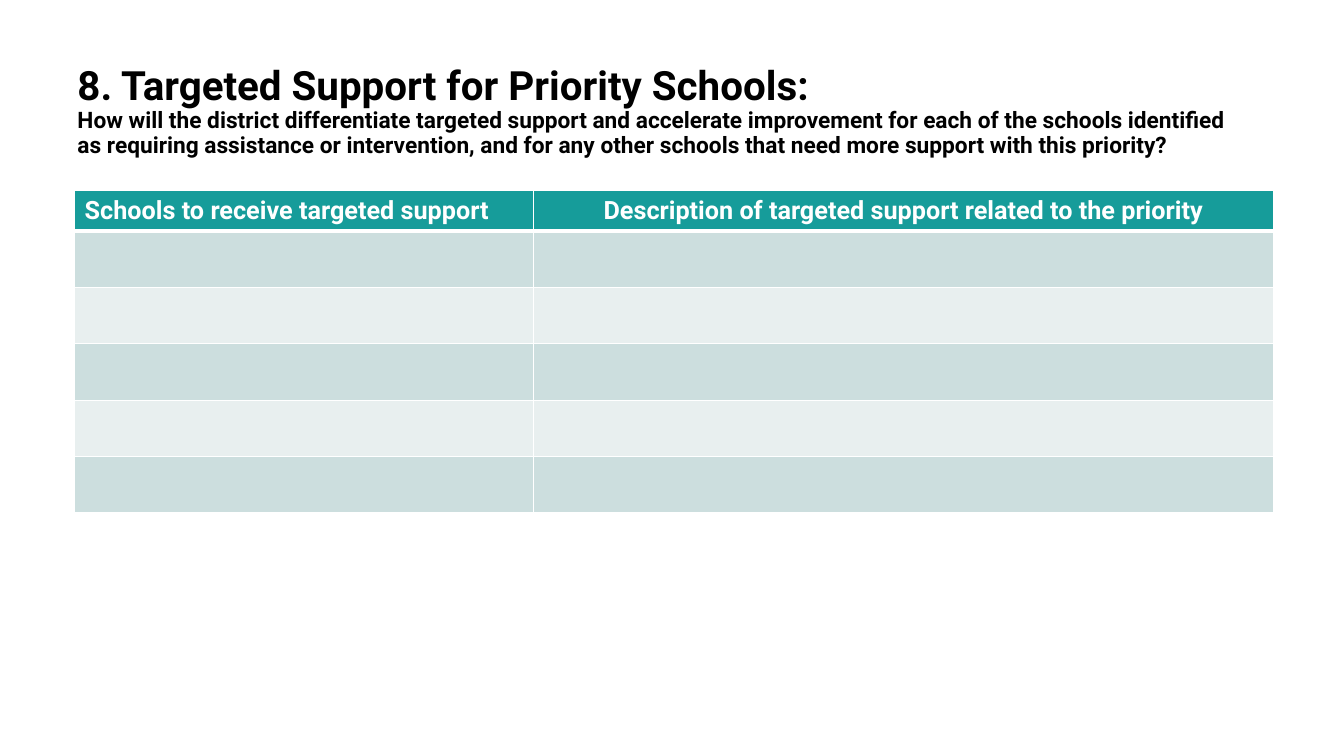
from lxml import etree
from pptx import Presentation
from pptx.dml.color import RGBColor
from pptx.enum.text import MSO_ANCHOR as Anchor, PP_ALIGN as Align
from pptx.oxml.ns import qn
from pptx.util import Inches, Pt

FONT = "Roboto"
BLACK = RGBColor(0x00, 0x00, 0x00)
WHITE = RGBColor(0xFF, 0xFF, 0xFF)
TEAL = RGBColor(0x16, 0x9C, 0x9A)
BANDS = [RGBColor(0xCC, 0xDE, 0xDE), RGBColor(0xE8, 0xEF, 0xEF)]

HEADING = "8. Targeted Support for Priority Schools:"
QUESTION = (
    "How will the district differentiate targeted support and accelerate "
    "improvement for each of the schools identified as requiring assistance or "
    "intervention, and for any other schools that need more support with this priority?"
)
COLUMNS = [
    ("Schools to receive targeted support", 4.55, Align.LEFT),
    ("Description of targeted support related to the priority", 7.34, Align.CENTER),
]
SCHOOL_ROWS = 5
HEADER_HEIGHT = 0.38
ROW_HEIGHT = 0.56


def style(span, size, color):
    span.font.name = FONT
    span.font.size = Pt(size)
    span.font.bold = True
    span.font.color.rgb = color


def add_title(page, left, top, width, height):
    box = page.shapes.add_textbox(*map(Inches, (left, top, width, height)))
    frame = box.text_frame
    frame.word_wrap = True
    frame.vertical_anchor = Anchor.TOP
    para = frame.paragraphs[0]
    para.text = f"{HEADING}\v{QUESTION}"
    para.line_spacing = 0.9
    for span, size in zip(para.runs, (28.8, 16.2)):
        style(span, size, BLACK)


def set_borders(cell, bottom):
    """Draw white cell edges, ahead of the fill as the schema requires."""
    props = cell._tc.get_or_add_tcPr()
    edges = {"a:lnL": 1, "a:lnR": 1, "a:lnT": 1, "a:lnB": bottom}
    for place, (tag, width) in enumerate(edges.items()):
        line = etree.Element(qn(tag), w=str(Pt(width)))
        fill = etree.SubElement(line, qn("a:solidFill"))
        etree.SubElement(fill, qn("a:srgbClr"), val=str(WHITE))
        props.insert(place, line)


def add_support_table(page, left, top):
    heights = [HEADER_HEIGHT] + [ROW_HEIGHT] * SCHOOL_ROWS
    width = sum(column[1] for column in COLUMNS)
    table = page.shapes.add_table(
        len(heights), len(COLUMNS),
        *map(Inches, (left, top, width, sum(heights))),
    ).table
    for row, height in zip(table.rows, heights):
        row.height = Inches(height)
    for index, (label, column_width, align) in enumerate(COLUMNS):
        table.columns[index].width = Inches(column_width)
        header = table.cell(0, index)
        header.vertical_anchor = Anchor.BOTTOM
        para = header.text_frame.paragraphs[0]
        para.text = label
        para.alignment = align
        style(para.runs[0], 18, WHITE)
        for row in range(len(heights)):
            cell = table.cell(row, index)
            cell.fill.solid()
            cell.fill.fore_color.rgb = BANDS[(row - 1) % 2] if row else TEAL
            set_borders(cell, bottom=1 if row else 3)


def main():
    deck = Presentation()
    deck.slide_width, deck.slide_height = Inches(13.33), Inches(7.5)
    page = deck.slides.add_slide(deck.slide_layouts[6])
    add_title(page, 0.67, 0.6, 11.65, 1.24)
    add_support_table(page, 0.74, 1.89)
    deck.save("out.pptx")


if __name__ == "__main__":
    main()
